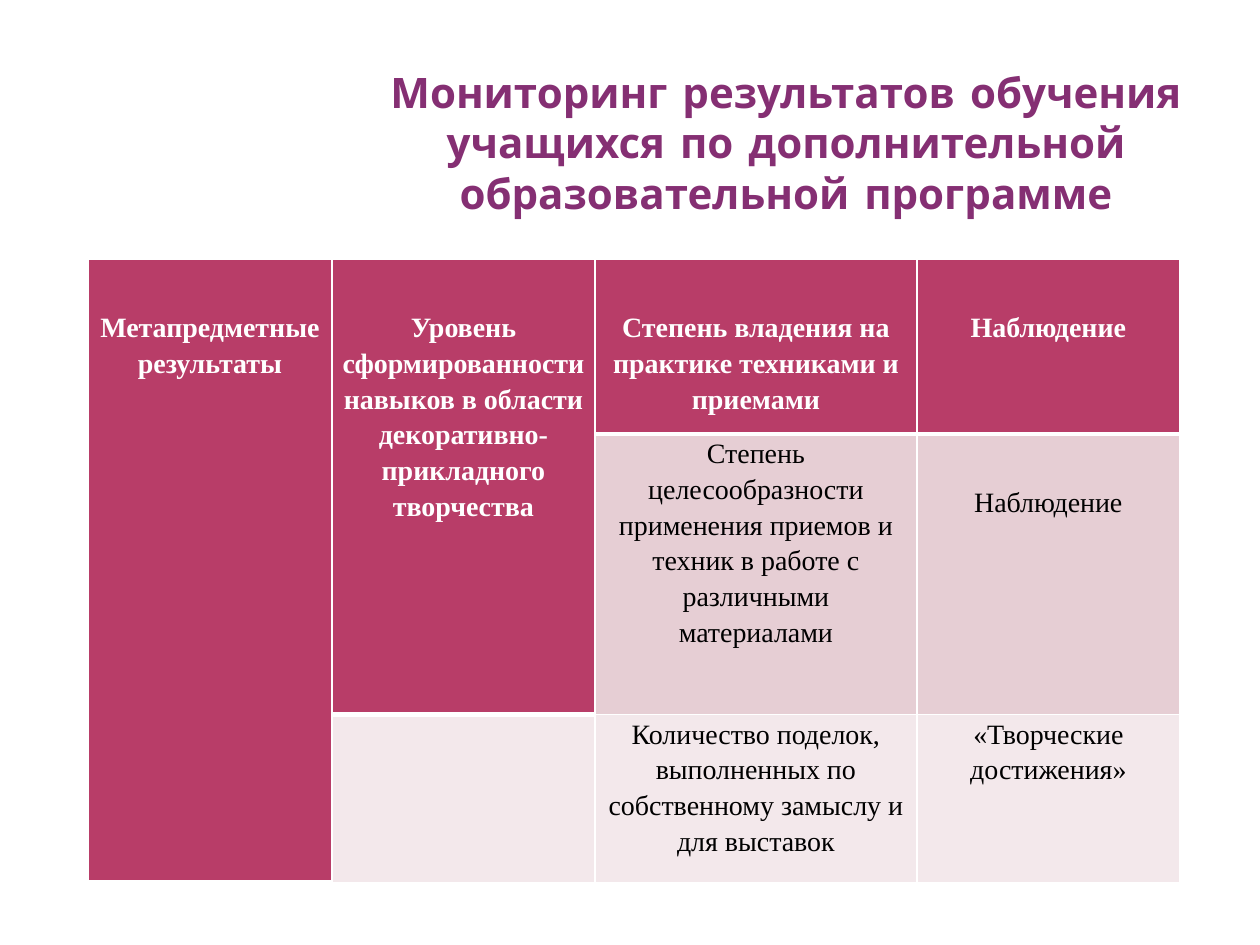
from lxml.etree import SubElement as Sub
from pptx import Presentation
from pptx.dml.color import RGBColor as RGB
from pptx.enum.text import MSO_ANCHOR as Anchor, MSO_AUTO_SIZE as Fit, PP_ALIGN as Align
from pptx.oxml.ns import qn
from pptx.util import Pt

SCALE = 914400 / 126
COLORS = {
    "title": "852F73", "edge": "EBC0C9", "head": "B83D68",
    "dark": "E6CED4", "pale": "F3E8EB", "white": "FFFFFF", "black": "000000",
}
COLS = [244, 263, 322, 263]
ROWS = [175, 227, 168]
DROP = 49  # top inset of cells whose text starts one line lower

# row, column, row span, fill, top inset, text
CELLS = [
    (0, 0, 3, "head", DROP, "Метапредметные результаты"),
    (0, 1, 2, "head", DROP, "Уровень сформированности навыков в области "
                            "декоративно-прикладного творчества"),
    (0, 2, 1, "head", DROP, "Степень владения на практике техниками и приемами"),
    (0, 3, 1, "head", DROP, "Наблюдение"),
    (1, 2, 1, "dark", 0, "Степень целесообразности применения приемов и техник "
                         "в работе с различными материалами"),
    (1, 3, 1, "dark", DROP, "Наблюдение"),
    (2, 1, 1, "pale", 0, ""),
    (2, 2, 1, "pale", 0, "Количество поделок, выполненных по собственному замыслу "
                         "и для выставок"),
    (2, 3, 1, "pale", 0, "«Творческие достижения»"),
]


def px(n):
    return round(n * SCALE)


def tint(name):
    return RGB.from_string(COLORS[name])


def line(parent, tag, color, width):
    """Add a solid line element to cell or run properties."""
    ln = Sub(parent, qn(tag), w=str(Pt(width)))
    Sub(Sub(ln, qn("a:solidFill")), qn("a:srgbClr"), val=COLORS[color])
    return ln


def write(frame, text, *, font, size, color, bold=False, space=1.0, after=0):
    para = frame.paragraphs[0]
    para.alignment = Align.CENTER
    para.line_spacing = space
    para.space_after = Pt(after)
    run = para.add_run()
    run.text = text
    run.font.name = font
    run.font.size = Pt(size)
    run.font.bold = bold
    run.font.color.rgb = tint(color)
    return run


def add_title(slide, text):
    title = slide.shapes.title
    title.left, title.top, title.width, title.height = map(px, (312, 60, 948, 165))
    frame = title.text_frame
    frame.word_wrap = True
    frame.auto_size = Fit.SHAPE_TO_FIT_TEXT
    frame.vertical_anchor = Anchor.TOP
    run = write(frame, text, font="Comic Neue", size=24, color="title", bold=True)
    props = run.font._element
    props.insert(0, line(props, "a:ln", "edge", 0.75))


def fill_cell(cell, fill, top, text):
    head = fill == "head"
    cell.margin_left = cell.margin_right = px(9)
    cell.margin_top, cell.margin_bottom = px(top), 0
    props = cell._tc.get_or_add_tcPr()
    for side in "LRTB":
        line(props, f"a:ln{side}", "white", 3 if head and side == "B" else 1)
    cell.fill.solid()
    cell.fill.fore_color.rgb = tint(fill)
    if text:
        write(cell.text_frame, text, font="Times New Roman", size=16, bold=head,
              color="white" if head else "black", space=1.15, after=10)


def add_grid(slide):
    frame = slide.shapes.add_table(len(ROWS), len(COLS), px(88), px(259),
                                   px(sum(COLS)), px(sum(ROWS)))
    table = frame.table
    for col, width in zip(table.columns, COLS):
        col.width = px(width)
    for row, height in zip(table.rows, ROWS):
        row.height = px(height)
    for row, col, span, fill, top, text in CELLS:
        cell = table.cell(row, col)
        if span > 1:
            cell.merge(table.cell(row + span - 1, col))
        fill_cell(cell, fill, top, text)


def main():
    deck = Presentation()
    deck.slide_width, deck.slide_height = px(1260), px(945)
    slide = deck.slides.add_slide(deck.slide_layouts[5])
    add_title(slide, "Мониторинг результатов обучения учащихся "
                     "по дополнительной образовательной программе")
    add_grid(slide)
    deck.save("out.pptx")


if __name__ == "__main__":
    main()
